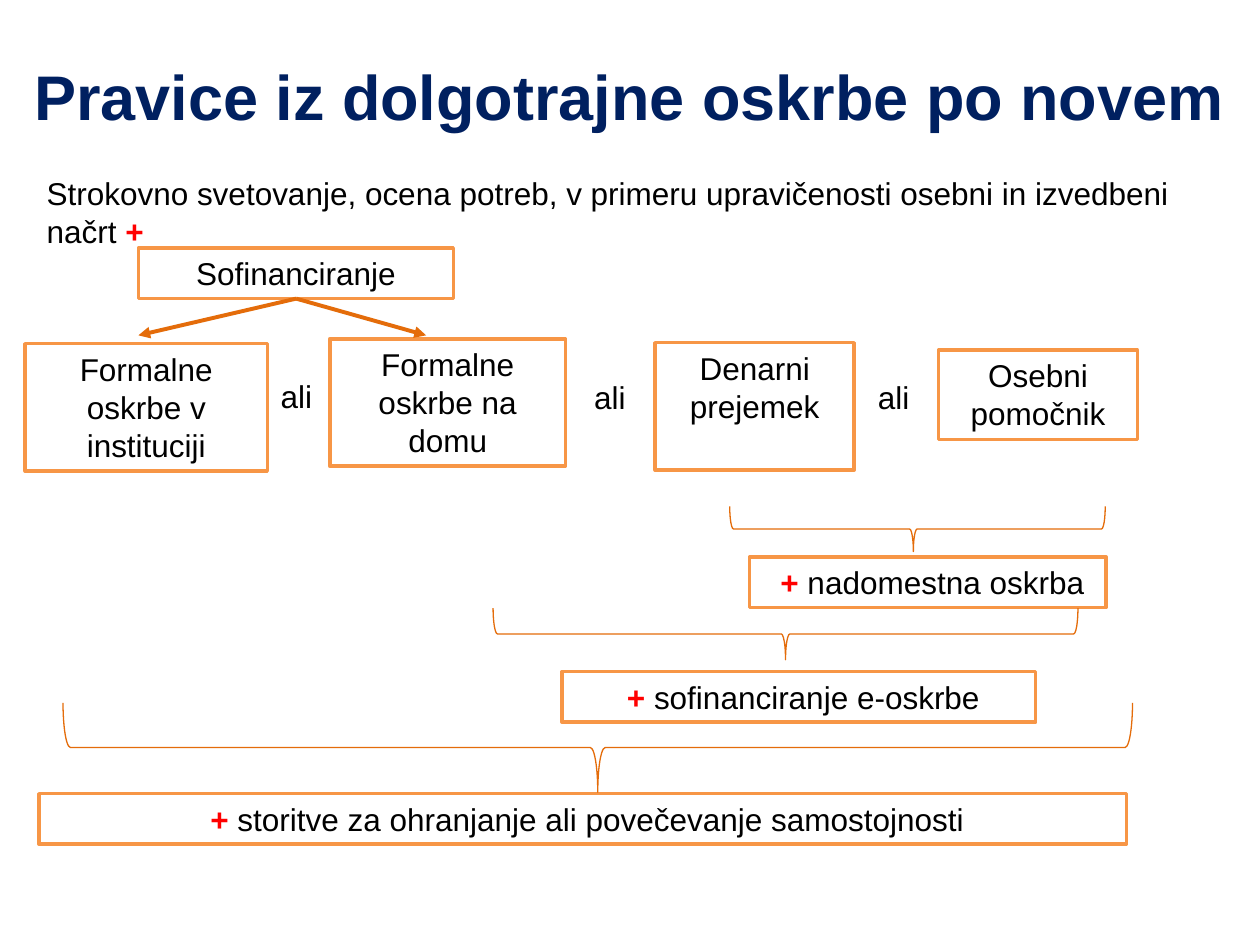
from dataclasses import dataclass

from lxml.etree import SubElement
from pptx import Presentation
from pptx.dml.color import RGBColor
from pptx.enum.shapes import MSO_CONNECTOR, MSO_SHAPE
from pptx.enum.text import MSO_ANCHOR, PP_ALIGN
from pptx.oxml.ns import qn
from pptx.util import Cm, Pt


@dataclass(frozen=True)
class Theme:
    font: str = "Arial"
    title_size: Pt = Pt(36)
    text_size: Pt = Pt(18)
    title: RGBColor = RGBColor(0x00, 0x20, 0x60)
    text: RGBColor = RGBColor(0, 0, 0)
    plus: RGBColor = RGBColor(0xFF, 0, 0)
    paper: RGBColor = RGBColor(0xFF, 0xFF, 0xFF)
    border: RGBColor = RGBColor(0xF7, 0x96, 0x46)
    accent: RGBColor = RGBColor(0xE4, 0x6C, 0x0A)
    border_width: Pt = Pt(2)
    arrow_width: Pt = Pt(2.25)
    brace_width: Pt = Pt(0.75)


@dataclass(frozen=True)
class Area:
    left: float
    top: float
    width: float
    height: float

    def lengths(self) -> tuple:
        return Cm(self.left), Cm(self.top), Cm(self.width), Cm(self.height)


@dataclass(frozen=True)
class Box:
    text: str
    area: Area
    plus: bool = False


@dataclass(frozen=True)
class Brace:
    area: Area
    point: float = 0.5


THEME = Theme()
LINE_HEIGHT = 1.02
RIGHT_HEIGHT = 2.57

BOXES = [
    Box("Formalne oskrbe na domu", Area(6.65, 6.83, 4.75, RIGHT_HEIGHT)),
    Box("Sofinanciranje", Area(2.79, 5, 6.35, LINE_HEIGHT)),
    Box("Formalne oskrbe v instituciji", Area(0.51, 6.93, 4.88, RIGHT_HEIGHT)),
    Box("Denarni prejemek", Area(13.21, 6.91, 4.01, RIGHT_HEIGHT)),
    Box("Osebni pomočnik", Area(18.92, 7.06, 4.01, 1.8)),
    Box("nadomestna oskrba", Area(15.11, 11.23, 7.19, LINE_HEIGHT), True),
    Box("sofinanciranje e-oskrbe", Area(11.33, 13.54, 9.55, LINE_HEIGHT), True),
    Box("storitve za ohranjanje ali povečevanje samostojnosti",
        Area(0.79, 16, 21.92, LINE_HEIGHT), True),
]
BRACES = [
    Brace(Area(14.71, 10.21, 7.57, 0.91), 0.511),
    Brace(Area(9.94, 12.26, 11.79, 1.04)),
    Brace(Area(1.27, 14.17, 21.56, 1.8)),
]
OR_POSITIONS = [(5.41, 7.47), (11.73, 7.49), (17.45, 7.49)]
ARROW_START = (5.97, 6.02)
ARROW_ENDS = [(2.79, 6.76), (8.59, 6.76)]


def style(p, color: RGBColor = THEME.text) -> None:
    p.font.name = THEME.font
    p.font.size = THEME.text_size
    p.font.color.rgb = color


def add_plus(p, text: str) -> None:
    r = p.add_run()
    r.text = text
    r.font.bold = True
    r.font.color.rgb = THEME.plus


def add_title(s, text: str, area: Area) -> None:
    sp = s.shapes.title
    sp.left, sp.top, sp.width, sp.height = area.lengths()
    tf = sp.text_frame
    tf.text = text
    tf.word_wrap = False
    tf.vertical_anchor = MSO_ANCHOR.MIDDLE
    tf.margin_left = tf.margin_right = tf.margin_top = tf.margin_bottom = 0
    p = tf.paragraphs[0]
    p.alignment = PP_ALIGN.LEFT
    p.font.name = THEME.font
    p.font.size = THEME.title_size
    p.font.bold = True
    p.font.color.rgb = THEME.title


def add_text(s, text: str, area: Area, wrap: bool = True):
    tf = s.shapes.add_textbox(*area.lengths()).text_frame
    tf.word_wrap = wrap
    p = tf.paragraphs[0]
    p.add_run().text = text
    style(p)
    return p


def add_box(s, box: Box) -> None:
    sp = s.shapes.add_shape(MSO_SHAPE.RECTANGLE, *box.area.lengths())
    sp.shadow.inherit = False
    sp.fill.solid()
    sp.fill.fore_color.rgb = THEME.paper
    sp.line.color.rgb = THEME.border
    sp.line.width = THEME.border_width
    tf = sp.text_frame
    tf.word_wrap = True
    tf.vertical_anchor = MSO_ANCHOR.TOP
    p = tf.paragraphs[0]
    p.alignment = PP_ALIGN.CENTER
    if box.plus:
        add_plus(p, " + ")
    r = p.add_run()
    r.text = box.text
    r.font.color.rgb = THEME.text
    style(p)


def add_brace(s, brace: Brace) -> None:
    area = brace.area
    shift = (area.width - area.height) / 2
    upright = Area(area.left + shift, area.top - shift, area.height, area.width)
    sp = s.shapes.add_shape(MSO_SHAPE.RIGHT_BRACE, *upright.lengths())
    sp.rotation = 90
    sp.adjustments[1] = brace.point
    sp.shadow.inherit = False
    sp.fill.background()
    sp.line.color.rgb = THEME.accent
    sp.line.width = THEME.brace_width


def add_arrow(s, start: tuple[float, float], end: tuple[float, float]) -> None:
    points = [Cm(v) for v in (*start, *end)]
    sp = s.shapes.add_connector(MSO_CONNECTOR.STRAIGHT, *points)
    sp.line.color.rgb = THEME.accent
    sp.line.width = THEME.arrow_width
    SubElement(sp.line._get_or_add_ln(), qn("a:tailEnd"), type="triangle")
    SubElement(sp._element.spPr, qn("a:effectLst"))


def main() -> None:
    prs = Presentation()
    prs.slide_width, prs.slide_height = Cm(25.4), Cm(19.05)
    s = prs.slides.add_slide(prs.slide_layouts[5])
    add_title(s, "Pravice iz dolgotrajne oskrbe po novem",
              Area(0.69, 1.14, 24.23, 1.55))
    for box in BOXES:
        add_box(s, box)
    for left, top in OR_POSITIONS:
        add_text(s, "ali", Area(left, top, 1.24, 1.04), wrap=False)
    intro = add_text(
        s,
        "Strokovno svetovanje, ocena potreb, v primeru upravičenosti "
        "osebni in izvedbeni načrt ",
        Area(0.69, 3.38, 23.47, 1.8),
    )
    add_plus(intro, "+")
    for end in ARROW_ENDS:
        add_arrow(s, ARROW_START, end)
    for brace in BRACES:
        add_brace(s, brace)
    prs.save("out.pptx")


if __name__ == "__main__":
    main()
